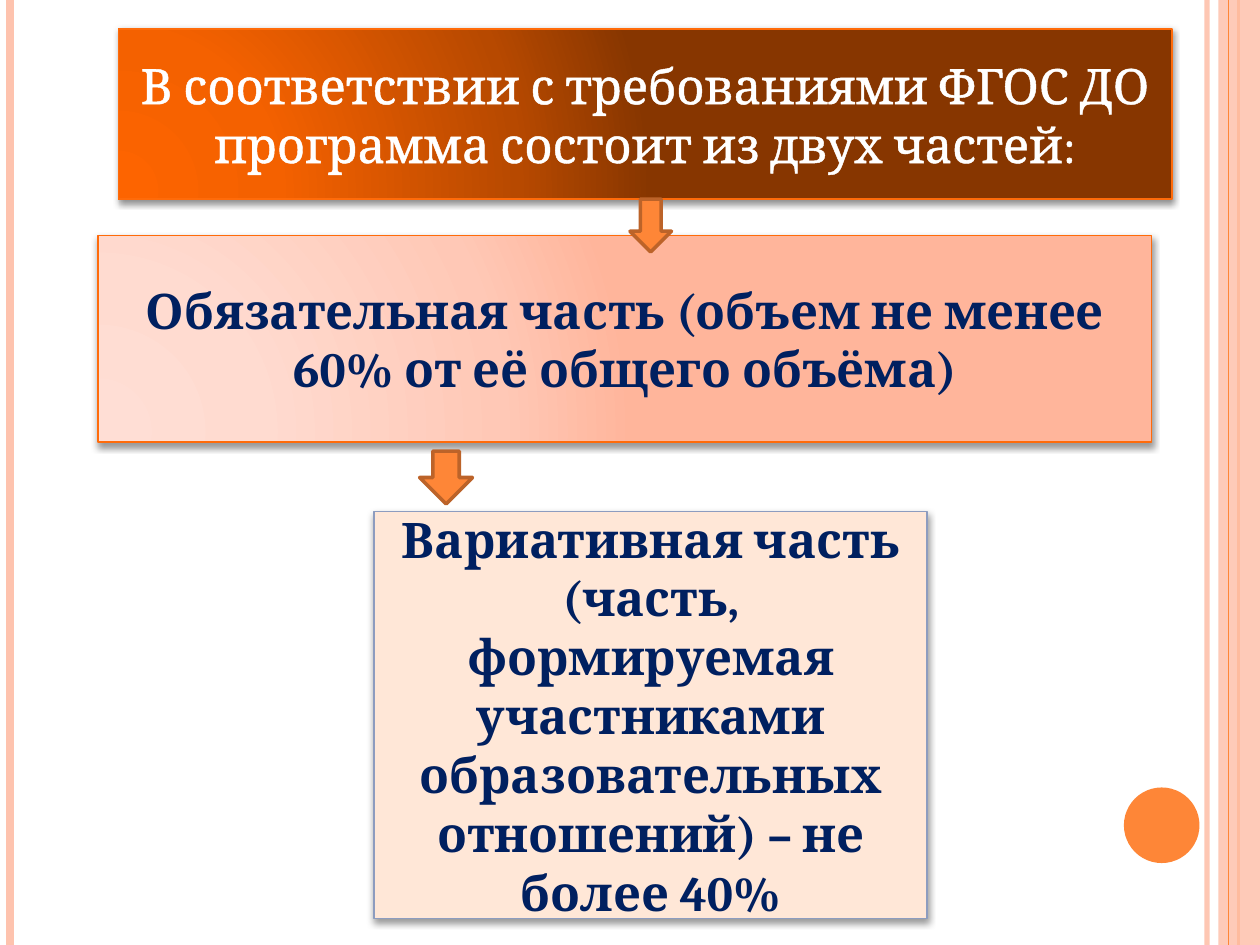
from lxml import etree
from pptx import Presentation
from pptx.dml.color import RGBColor
from pptx.enum.shapes import MSO_CONNECTOR, MSO_SHAPE
from pptx.enum.text import MSO_ANCHOR, PP_ALIGN
from pptx.oxml.ns import qn
from pptx.util import Inches, Pt

RECTANGLE = MSO_SHAPE.RECTANGLE
OVAL = MSO_SHAPE.OVAL
DOWN_ARROW = MSO_SHAPE.DOWN_ARROW
STRAIGHT = MSO_CONNECTOR.STRAIGHT
MIDDLE = MSO_ANCHOR.MIDDLE
CENTER = PP_ALIGN.CENTER

COLORS = {
    "white": "FFFFFF",
    "black": "000000",
    "orange": "FE8637",
    "peach": "FEC3AE",
    "cream": "FFE7D7",
    "navy": "002060",
    "box_line": "FF6B0A",
    "arrow_line": "BC6329",
    "blue_line": "8D9CBF",
}
DARK_GRADIENT = [(0, "FD6400"), (30, "F46100"), (75, "B74900"), (100, "873600")]
LIGHT_GRADIENT = [(0, "FFDED5"), (30, "FFDBD0"), (75, "FFC8B6"), (100, "FFB59B")]
FOCUS = {"l": 5, "t": 100, "r": 120, "b": 10}
FONT = "Cambria"


def rgb(name):
    return RGBColor.from_string(COLORS[name])


def add_child(parent, tag, **attributes):
    values = {key: str(value) for key, value in attributes.items()}
    return etree.SubElement(parent, qn(tag), values)


def set_alpha(color_parent, percent):
    color = color_parent.find(".//" + qn("a:srgbClr"))
    add_child(color, "a:alpha", val=percent * 1000)


def set_line(line, color, width):
    line.color.rgb = rgb(color)
    line.width = Pt(width)


def add_stripe(slide, x, color, width, alpha=None):
    stripe = slide.shapes.add_connector(
        STRAIGHT, Inches(x), Inches(0), Inches(x), Inches(7.5))
    set_line(stripe.line, color, width)
    properties = stripe._element.spPr
    if alpha:
        set_alpha(properties, alpha)
    add_child(properties, "a:effectLst")


def add_shape(slide, kind, place, fill, line=None, width=1):
    shape = slide.shapes.add_shape(kind, *[Inches(value) for value in place])
    shape.shadow.inherit = False
    shape.fill.solid()
    shape.fill.fore_color.rgb = rgb(fill)
    if line:
        set_line(shape.line, line, width)
    else:
        shape.line.fill.background()
    return shape


def set_gradient(shape, stops):
    solid = shape._element.spPr.find(qn("a:solidFill"))
    gradient = etree.Element(qn("a:gradFill"), rotWithShape="1")
    stop_list = add_child(gradient, "a:gsLst")
    for position, color in stops:
        stop = add_child(stop_list, "a:gs", pos=position * 1000)
        add_child(stop, "a:srgbClr", val=color)
    path = add_child(gradient, "a:path", path="circle")
    focus = {side: percent * 1000 for side, percent in FOCUS.items()}
    add_child(path, "a:fillToRect", **focus)
    solid.getparent().replace(solid, gradient)


def set_shadow(shape, alpha, distance):
    effects = shape._element.spPr.find(qn("a:effectLst"))
    shadow = add_child(effects, "a:outerShdw", blurRad=Pt(4), dist=Pt(distance),
                       dir=90 * 60000, rotWithShape=0)
    add_child(shadow, "a:srgbClr", val=COLORS["black"])
    set_alpha(shadow, alpha)


def set_text(shape, text, color, bold):
    frame = shape.text_frame
    frame.word_wrap = True
    frame.vertical_anchor = MIDDLE
    paragraph = frame.paragraphs[0]
    paragraph.alignment = CENTER
    run = paragraph.add_run()
    run.text = text
    run.font.name = FONT
    run.font.size = Pt(28)
    run.font.bold = bold
    run.font.color.rgb = rgb(color)
    return run


def outline_text(run, color, width):
    outline = etree.Element(qn("a:ln"), w=str(Pt(width)))
    fill = add_child(outline, "a:solidFill")
    add_child(fill, "a:srgbClr", val=COLORS[color])
    run.font._element.insert(0, outline)


def add_box(slide, place, text, fill="cream", line="box_line", gradient=None,
            color="navy", bold=True, shadow=(40, 2)):
    box = add_shape(slide, RECTANGLE, place, fill, line)
    if gradient:
        set_gradient(box, gradient)
    set_shadow(box, *shadow)
    return set_text(box, text, color, bold)


def add_arrow(slide, place):
    add_shape(slide, DOWN_ARROW, place, "orange", "arrow_line", 2)


def add_decoration(slide):
    add_stripe(slide, 9.58, "peach", 3, 93)
    add_stripe(slide, 0.08, "peach", 4.5)
    add_stripe(slide, 9.83, "orange", 1.5)
    band = add_shape(slide, RECTANGLE, (9.67, 0, 0.33, 7.5), "peach")
    set_alpha(band._element.spPr, 87)
    add_stripe(slide, 9.75, "orange", 0.75)
    add_shape(slide, OVAL, (8.92, 6.25, 0.6, 0.6), "orange")


def main():
    presentation = Presentation()
    presentation.slide_width = Inches(10)
    presentation.slide_height = Inches(7.5)
    slide = presentation.slides.add_slide(presentation.slide_layouts[6])

    add_decoration(slide)
    heading = add_box(
        slide, (0.94, 0.23, 8.36, 1.35),
        "В соответствии с требованиями ФГОС ДО программа состоит из двух частей:",
        gradient=DARK_GRADIENT, color="white", bold=False, shadow=(42, 1.6))
    outline_text(heading, "white", 1.45)
    add_box(
        slide, (0.78, 1.87, 8.36, 1.64),
        "Обязательная часть (объем не менее 60% от её общего объёма)",
        gradient=LIGHT_GRADIENT)
    add_box(
        slide, (2.97, 4.06, 4.39, 3.23),
        "Вариативная часть (часть, формируемая участниками "
        "образовательных отношений) – не более 40%",
        line="blue_line")
    add_arrow(slide, (5, 1.58, 0.33, 0.42))
    add_arrow(slide, (3.33, 3.58, 0.42, 0.42))

    presentation.save("out.pptx")


if __name__ == "__main__":
    main()
